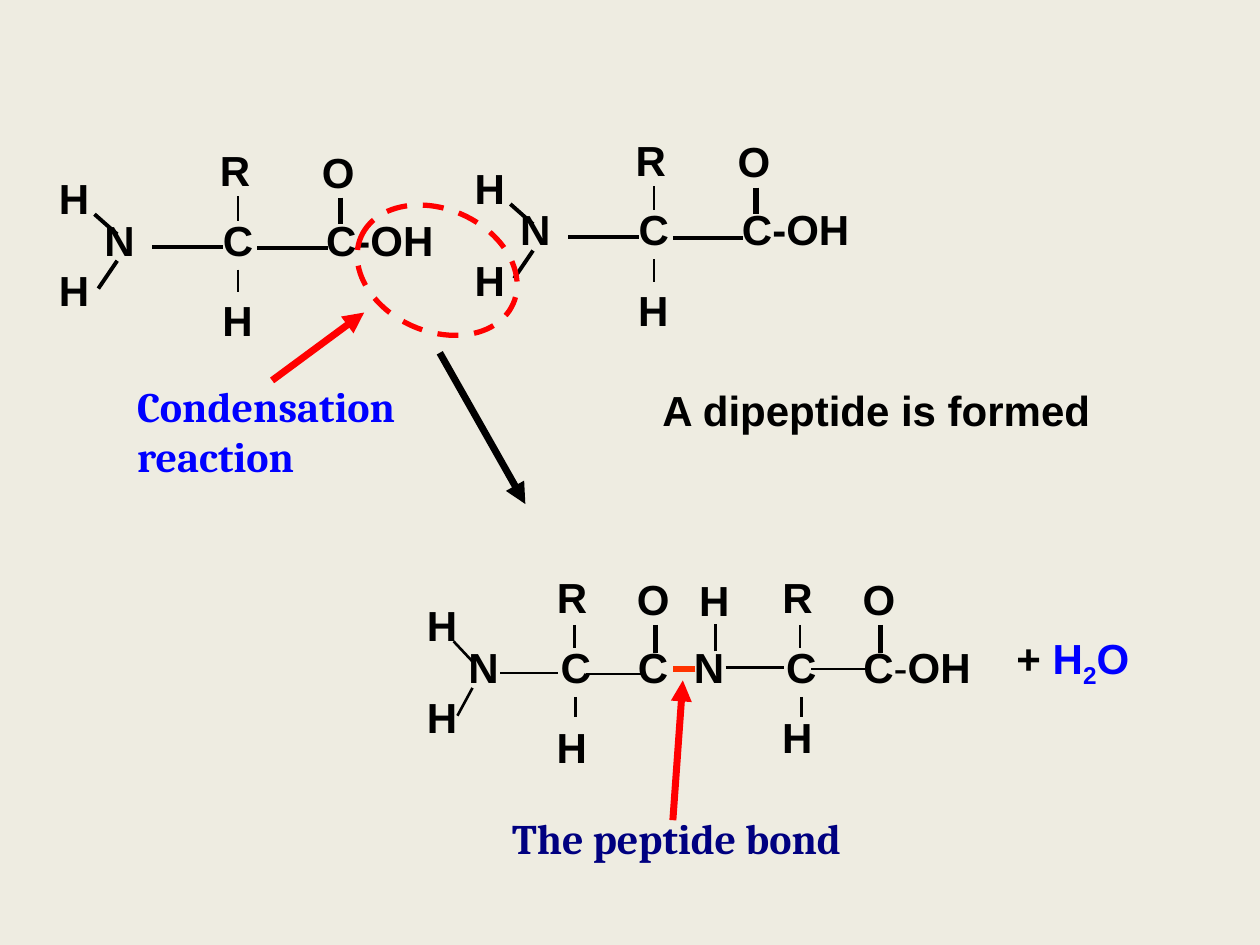
import pptx
import pptx.dml.color
import pptx.enum.dml
import pptx.enum.shapes
import pptx.enum.text
import pptx.oxml.ns
import pptx.util
from lxml import etree

Pt = pptx.util.Pt
RGBColor = pptx.dml.color.RGBColor
qn = pptx.oxml.ns.qn

BACKGROUND = RGBColor(0xEE, 0xEC, 0xE1)
BLACK = RGBColor(0, 0, 0)
RED = RGBColor(0xFF, 0, 0)
ORANGE = RGBColor(0xFF, 0x33, 0)
BLUE = RGBColor(0, 0, 0xFF)
NAVY = RGBColor(0, 0, 0x80)
CENTER = pptx.enum.text.PP_ALIGN.CENTER
LEFT = pptx.enum.text.PP_ALIGN.LEFT

# Amino acid: atoms (text, box, alignment) and bonds (x1, y1, x2, y2, width)
AMINO_OFFSETS = [(0, 0), (237.6, -5.8)]
AMINO_TABS = (67.7, 126.7)
AMINO_ATOMS = [
    ("N\tC\tC-OH", (52.6, 118.8, 204.5, 45.4), LEFT),
    ("R", (113.8, 79.2, 41, 40.3), CENTER),
    ("H", (114.5, 164.9, 42.5, 43.9), CENTER),
    ("O", (169.9, 79.9, 46.8, 42.5), CENTER),
    ("H", (26.6, 95, 38.2, 47.5), LEFT),
    ("H", (26.6, 147.6, 39.6, 43.9), LEFT),
]
AMINO_BONDS = [
    (136.1, 112.3, 136.1, 126, 1.5),
    (136.1, 154.1, 136.1, 167, 1.5),
    (194.4, 113, 194.4, 128.2, 3),
    (67, 149, 56.2, 164.9, 2.25),
    (67, 133.9, 54, 122.4, 2.25),
    (87.1, 141.1, 127.4, 141.1, 2.25),
    (146.9, 141.8, 187.2, 141.8, 2.25),
]

# Dipeptide: runs are (text, colour, bold, baseline)
RESIDUE_TABS = (52.6, 96.8)
RESIDUES = [  # chain runs, chain width, dx, dy of chain bonds, dy of lower H
    ([("N\tC\tC", BLACK, True, 0)], 166.3, 0, 0, 0),
    ([("N\tC\tC", BLACK, True, 0), ("-", BLACK, False, 0),
      ("OH", BLACK, True, 0)], 182.2, 128.9, -2.9, -5.8),
]
RESIDUE_BONDS = [
    (328.3, 357.1, 328.3, 370.1, 1.5),
    (329, 398.2, 329, 410, 1.5),
    (374.4, 357.1, 374.4, 373, 3),
]
CHAIN_BONDS = [
    (285.8, 384.5, 319, 384.5, 1.5),
    (334.8, 385.2, 367.2, 385.2, 1.5),
]
END_ATOMS = [
    ("H", (236.9, 339.1, 31, 47.5), LEFT),
    ("H", (236.9, 391.7, 31.7, 43.9), LEFT),
    ("H", (392.4, 324.7, 31, 47.5), LEFT),
]
END_BONDS = [
    (270, 393.1, 261.4, 409, 1.5),
    (270, 378, 259.2, 366.5, 1.5),
    (409, 372.2, 409, 356.4, 1.5),
]
PEPTIDE_BOND = (397.4, 382.3, 384.5, 382.3, 3)
WATER = [("+ ", BLACK, True, 0), ("H", BLUE, True, 0),
         ("2", BLUE, True, -25), ("O", BLUE, True, 0)]

# Labels and arrows
LABELS = [
    ("Condensation reaction", (71.3, 213.8, 167, 67), LEFT, "Cambria", BLUE),
    ("The peptide bond", (267.1, 460.8, 239, 46.1), CENTER, "Cambria", NAVY),
    ("A dipeptide is formed", (371.5, 216, 292.3, 36), LEFT, "Arial", BLACK),
]
ARROWS = [
    ((155.5, 217.4, 208.1, 178.6, 4), RED),
    ((251.3, 201.6, 300.2, 288, 4), BLACK),
    ((384.5, 468.7, 390.2, 388.8, 4), RED),
]


def move(box, dx, dy):
    return (box[0] + dx, box[1] + dy, *box[2:])


def move_bond(bond, dx, dy):
    x1, y1, x2, y2, width = bond
    return x1 + dx, y1 + dy, x2 + dx, y2 + dy, width


def add_text(shapes, runs, box, align=LEFT, font="Arial", color=BLACK, tabs=()):
    if isinstance(runs, str):
        runs = [(runs, color, True, 0)]
    tf = shapes.add_textbox(*map(Pt, box)).text_frame
    tf.word_wrap = True
    p = tf.paragraphs[0]
    p.alignment = align
    if tabs:
        tab_list = etree.SubElement(p._p.get_or_add_pPr(), qn("a:tabLst"))
        for pos in tabs:
            etree.SubElement(tab_list, qn("a:tab"), pos=str(Pt(pos)), algn="l")
    for text, run_color, bold, baseline in runs:
        r = p.add_run()
        r.text = text
        r.font.name = font
        r.font.size = Pt(24)
        r.font.bold = bold
        r.font.color.rgb = run_color
        if baseline:
            r._r.get_or_add_rPr().set("baseline", str(baseline * 1000))


def add_line(shapes, line, color=BLACK, arrow=False):
    *ends, width = line
    cxn = shapes.add_connector(pptx.enum.shapes.MSO_CONNECTOR.STRAIGHT, *map(Pt, ends))
    cxn.line.color.rgb = color
    cxn.line.width = Pt(width)
    if arrow:
        etree.SubElement(cxn.line._get_or_add_ln(), qn("a:tailEnd"), type="triangle")
    etree.SubElement(cxn._element.spPr, qn("a:effectLst"))


prs = pptx.Presentation()
prs.slide_width, prs.slide_height = Pt(720), Pt(540)
s = prs.slides.add_slide(prs.slide_layouts[6])
s.background.fill.solid()
s.background.fill.fore_color.rgb = BACKGROUND

# Two amino acids
amino_acids = s.shapes.add_group_shape().shapes
for dx, dy in AMINO_OFFSETS:
    for text, box, align in AMINO_ATOMS:
        add_text(amino_acids, text, move(box, dx, dy), align,
                 tabs=AMINO_TABS if "\t" in text else ())
    for bond in AMINO_BONDS:
        add_line(amino_acids, move_bond(bond, dx, dy))

# Ring around the atoms that leave as water
sp = s.shapes.add_shape(pptx.enum.shapes.MSO_SHAPE.OVAL,
                        Pt(202.3), Pt(119.5), Pt(95), Pt(69.8))
sp.rotation = 23.8
sp.shadow.inherit = False
sp.fill.background()
sp.line.color.rgb = RED
sp.line.width = Pt(3)
sp.line.dash_style = pptx.enum.dml.MSO_LINE.DASH

# Dipeptide and water
dipeptide = s.shapes.add_group_shape().shapes
for runs, width, dx, chain_dy, h_dy in RESIDUES:
    add_text(dipeptide, runs, (260.6 + dx, 362.9, width, 45.4), tabs=RESIDUE_TABS)
    add_text(dipeptide, "R", (310.3 + dx, 323.3, 33.1, 40.3), CENTER)
    add_text(dipeptide, "O", (354.2 + dx, 324, 38.2, 42.5), CENTER)
    add_text(dipeptide, "H", (311 + dx, 409 + h_dy, 34.6, 43.9))
    for bond in RESIDUE_BONDS:
        add_line(dipeptide, move_bond(bond, dx, 0))
    for bond in CHAIN_BONDS:
        add_line(dipeptide, move_bond(bond, dx, chain_dy))
for text, box, align in END_ATOMS:
    add_text(dipeptide, text, box, align)
for bond in END_BONDS:
    add_line(dipeptide, bond)
add_line(dipeptide, PEPTIDE_BOND, ORANGE)
add_text(dipeptide, WATER, (573.8, 357.8, 115.2, 50.4))

# Labels and arrows
for label in LABELS:
    add_text(s.shapes, *label)
for line, color in ARROWS:
    add_line(s.shapes, line, color, arrow=True)

prs.save("out.pptx")
